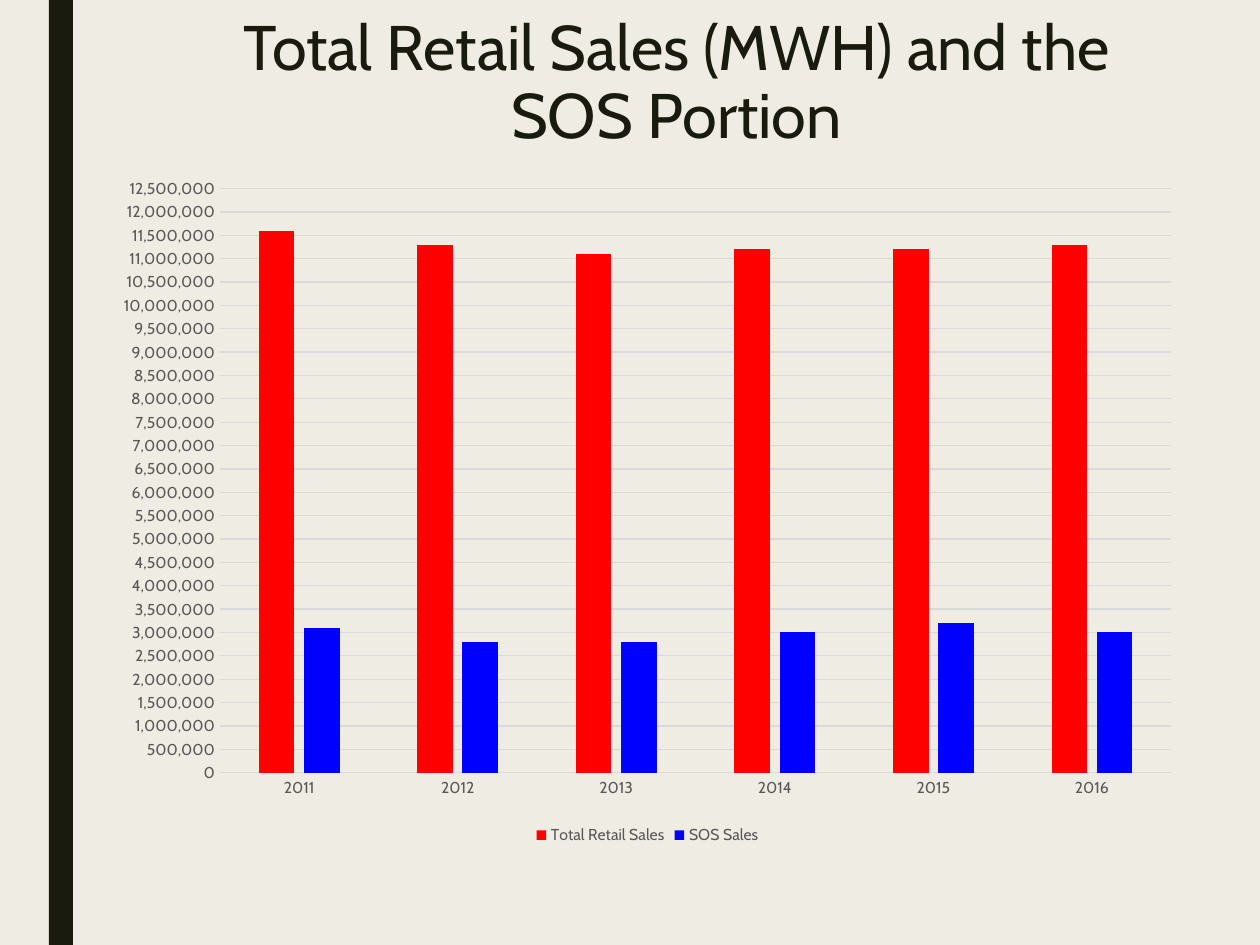
from pptx import Presentation
from pptx.chart.data import CategoryChartData
from pptx.dml.color import RGBColor
from pptx.enum.chart import XL_CHART_TYPE, XL_LEGEND_POSITION, XL_TICK_MARK
from pptx.enum.shapes import MSO_SHAPE
from pptx.enum.text import MSO_ANCHOR, PP_ALIGN
from pptx.util import Pt

SCALE = 914400 / 126  # EMU per px
FONT = "Cabin"
COLORS = {
    "background": "EFEDE3",
    "dark": "191B0E",
    "label": "595959",
    "grid": "D9D9D9",
    "total": "FF0000",
    "sos": "0000FF",
}


def box(*lengths):
    return [round(length * SCALE) for length in lengths]


def style_font(font, size, color):
    font.name = FONT
    font.size = Pt(size)
    font.color.rgb = RGBColor.from_string(COLORS[color])


prs = Presentation()
prs.slide_width, prs.slide_height = box(1260, 945)
slide = prs.slides.add_slide(prs.slide_layouts[6])
slide.background.fill.solid()
slide.background.fill.fore_color.rgb = RGBColor.from_string(COLORS["background"])

# Dark bar on the left
side_bar = slide.shapes.add_shape(MSO_SHAPE.RECTANGLE, *box(49, 0, 24, 945))
side_bar.shadow.inherit = False
side_bar.fill.solid()
side_bar.fill.fore_color.rgb = RGBColor.from_string(COLORS["dark"])
side_bar.line.fill.background()

# Title
title = slide.shapes.add_textbox(*box(180, 11, 993, 204)).text_frame
title.word_wrap = True
title.vertical_anchor = MSO_ANCHOR.TOP
heading = title.paragraphs[0]
heading.text = "Total Retail Sales (MWH) and the SOS Portion"
heading.alignment = PP_ALIGN.CENTER
heading.line_spacing = 0.89
style_font(heading.font, 36, "dark")

# Sales chart
sales = CategoryChartData(number_format="#,##0")
sales.categories = ["2011", "2012", "2013", "2014", "2015", "2016"]
sales.add_series("Total Retail Sales",
                 [11600000, 11300000, 11100000, 11200000, 11200000, 11300000])
sales.add_series("SOS Sales",
                 [3100000, 2800000, 2800000, 3000000, 3200000, 3000000])
chart = slide.shapes.add_chart(
    XL_CHART_TYPE.COLUMN_CLUSTERED, *box(102, 165, 1091, 685), sales).chart
chart.has_title = False
style_font(chart.font, 10, "label")

# Columns
columns = chart.plots[0]
columns.gap_width = 219
columns.overlap = -27
columns.vary_by_categories = False
for series, color in zip(columns.series, ("total", "sos")):
    series.format.fill.solid()
    series.format.fill.fore_color.rgb = RGBColor.from_string(COLORS[color])

# Axes and gridlines
years, amounts = chart.category_axis, chart.value_axis
for axis in (years, amounts):
    axis.major_tick_mark = axis.minor_tick_mark = XL_TICK_MARK.NONE
    style_font(axis.tick_labels.font, 9, "label")
amounts.minimum_scale = 0
amounts.maximum_scale = 12500000
amounts.major_unit = 500000
amounts.tick_labels.number_format = "#,##0"
amounts.tick_labels.number_format_is_linked = False
amounts.format.line.fill.background()
for line in (years.format.line, amounts.major_gridlines.format.line):
    line.width = Pt(0.75)
    line.color.rgb = RGBColor.from_string(COLORS["grid"])

# Legend
chart.has_legend = True
chart.legend.position = XL_LEGEND_POSITION.BOTTOM
chart.legend.include_in_layout = False
style_font(chart.legend.font, 9, "label")

prs.save("out.pptx")
